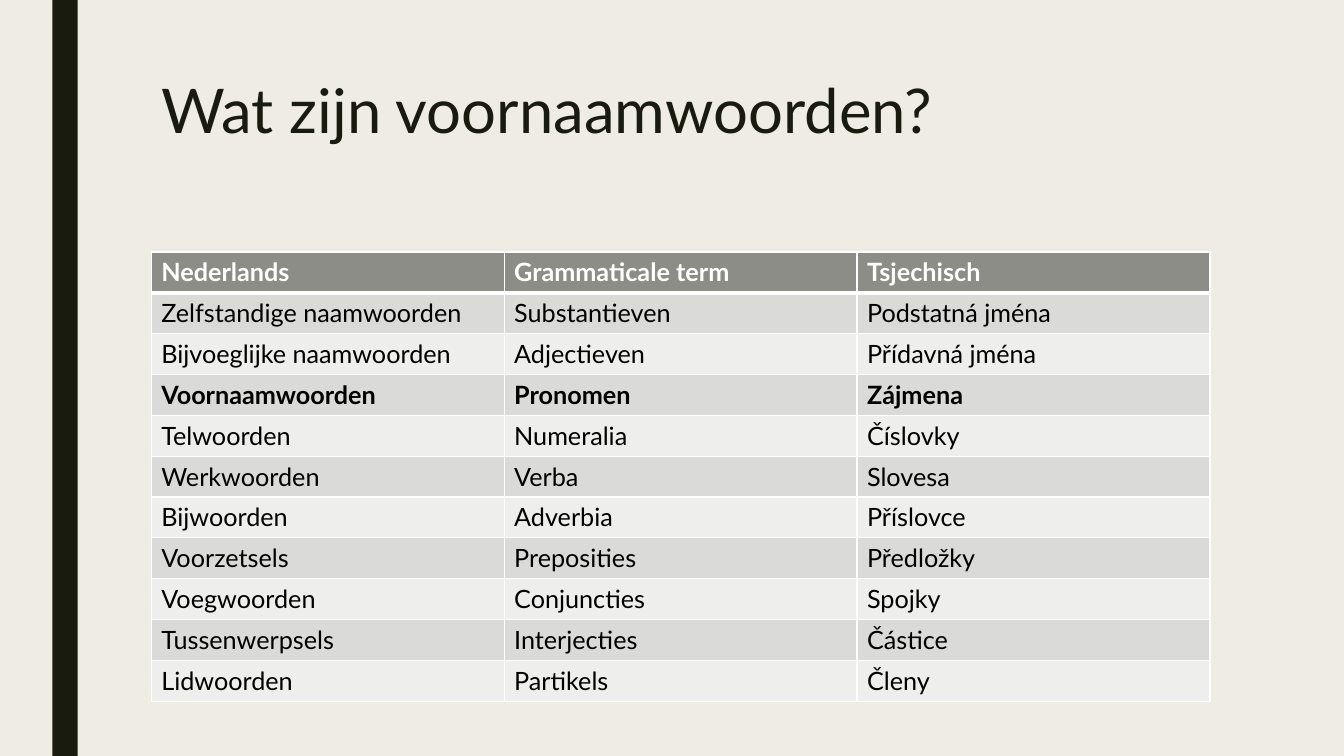
"""Build a slide with a table of Dutch, grammatical and Czech word classes."""
from lxml import etree
from pptx import Presentation
from pptx.dml.color import RGBColor
from pptx.enum.shapes import MSO_SHAPE
from pptx.enum.text import MSO_ANCHOR
from pptx.oxml.ns import qn
from pptx.util import Inches, Pt

RECTANGLE = MSO_SHAPE.RECTANGLE
TOP = MSO_ANCHOR.TOP

TITLE = "Wat zijn voornaamwoorden?"
WORD_CLASSES = [
    ("Nederlands", "Grammaticale term", "Tsjechisch"),
    ("Zelfstandige naamwoorden", "Substantieven", "Podstatná jména"),
    ("Bijvoeglijke naamwoorden", "Adjectieven", "Přídavná jména"),
    ("Voornaamwoorden", "Pronomen", "Zájmena"),
    ("Telwoorden", "Numeralia", "Číslovky"),
    ("Werkwoorden", "Verba", "Slovesa"),
    ("Bijwoorden", "Adverbia", "Příslovce"),
    ("Voorzetsels", "Preposities", "Předložky"),
    ("Voegwoorden", "Conjuncties", "Spojky"),
    ("Tussenwerpsels", "Interjecties", "Částice"),
    ("Lidwoorden", "Partikels", "Členy"),
]
BOLD_ROWS = (0, 3)
FONT = "Lato"
BACKGROUND, DARK, WHITE, BLACK = "EFEDE3", "191B0E", "FFFFFF", "000000"
HEADER_FILL, BAND_FILLS = "8C8D86", ("EEEEED", "DADBD9")
LEFT, WIDTH = Inches(1.5), Inches(10.5)
TABLE_TOP, TABLE_HEIGHT = Inches(2.5), Inches(4.46)


def paint(color_holder, color):
    color_holder.solid()
    color_holder.fore_color.rgb = RGBColor.from_string(color)


def style_text(paragraph, size, color, bold=False):
    font = paragraph.font
    font.name, font.size, font.bold = FONT, Pt(size), bold
    font.color.rgb = RGBColor.from_string(color)


def add_borders(cell, row):
    properties = cell._tc.get_or_add_tcPr()
    widths = {"L": 1, "R": 1, "T": 3 if row == 1 else 1, "B": 3 if row == 0 else 1}
    for side, width in widths.items():
        line = etree.SubElement(properties, qn(f"a:ln{side}"), w=str(Pt(width)))
        fill = etree.SubElement(line, qn("a:solidFill"))
        etree.SubElement(fill, qn("a:srgbClr"), val=WHITE)


def add_title(page):
    title = page.shapes.title
    title.left, title.top, title.width, title.height = LEFT, Inches(0.75), WIDTH, Inches(0.85)
    frame = title.text_frame
    frame.text = TITLE
    frame.word_wrap = True
    frame.vertical_anchor = TOP
    paragraph = frame.paragraphs[0]
    paragraph.alignment = 1
    paragraph.line_spacing = 0.89
    style_text(paragraph, 44, DARK)


def add_word_table(page):
    row_count, column_count = len(WORD_CLASSES), len(WORD_CLASSES[0])
    table = page.shapes.add_table(
        row_count, column_count, LEFT, TABLE_TOP, WIDTH, TABLE_HEIGHT).table
    for row, words in enumerate(WORD_CLASSES):
        for column, word in enumerate(words):
            cell = table.cell(row, column)
            cell.text = word
            add_borders(cell, row)
            paint(cell.fill, BAND_FILLS[row % 2] if row else HEADER_FILL)
            style_text(cell.text_frame.paragraphs[0], 18,
                       BLACK if row else WHITE, row in BOLD_ROWS)


def main():
    deck = Presentation()
    deck.slide_width, deck.slide_height = Inches(13.33), Inches(7.5)
    page = deck.slides.add_slide(deck.slide_layouts[5])
    paint(page.background.fill, BACKGROUND)
    bar = page.shapes.add_shape(RECTANGLE, Inches(0.52), 0, Inches(0.25), deck.slide_height)
    bar.shadow.inherit = False
    paint(bar.fill, DARK)
    bar.line.fill.background()
    add_title(page)
    add_word_table(page)
    deck.save("out.pptx")


if __name__ == "__main__":
    main()
